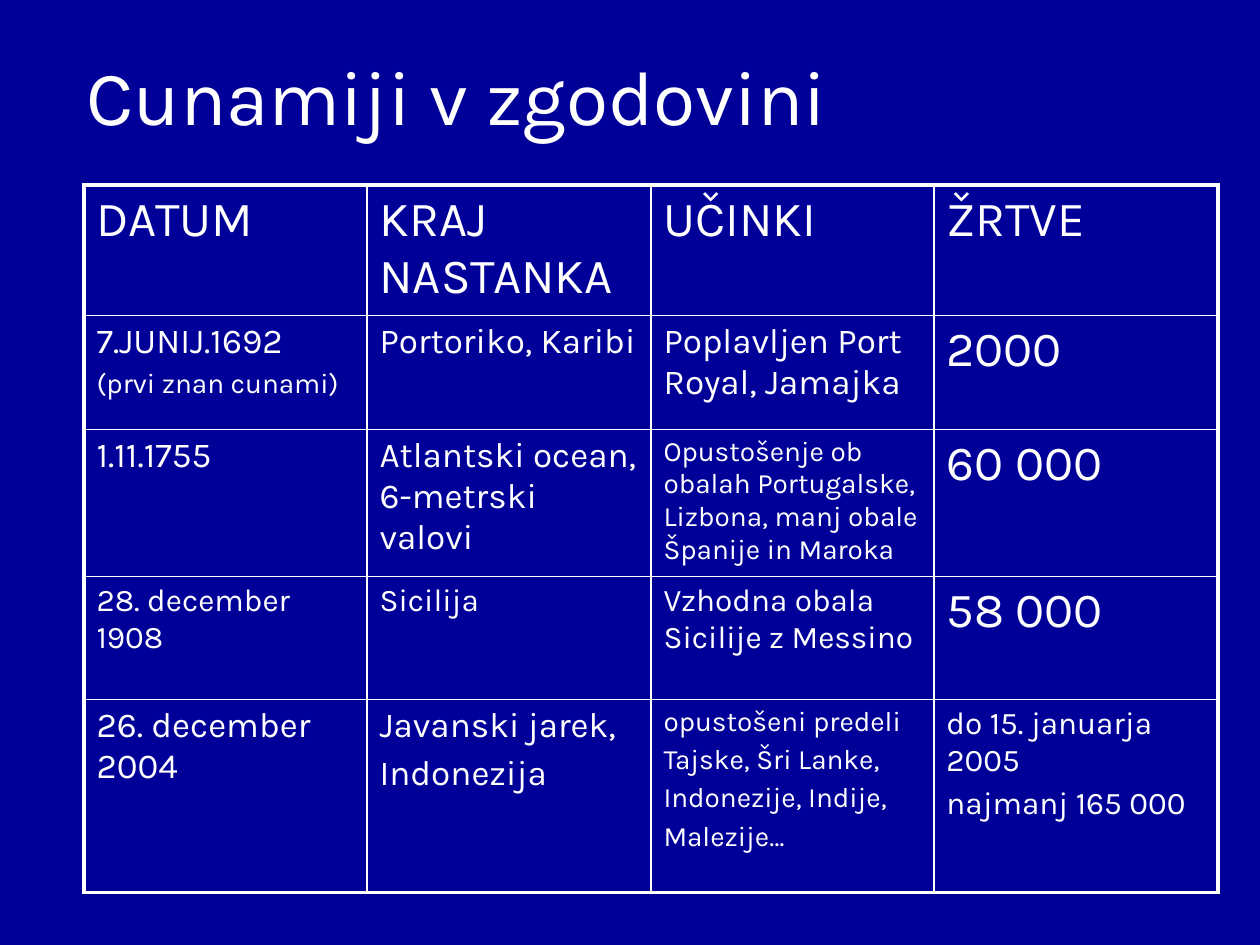
import pptx
import pptx.dml.color
import pptx.enum.text
import pptx.oxml.ns
import pptx.util
from lxml import etree

COLOURS = {"background": "000099", "text": "FFFFFF", "border": "FFFFFF"}
EMU_PER_PX = 914400 / 126
COLUMN_WIDTHS = [283, 284, 283, 284]
ROW_HEIGHTS = [127, 114, 145, 123, 193]

TSUNAMIS = [
    [[("DATUM", 28)], [("KRAJ NASTANKA", 28)], [("UČINKI", 28)], [("ŽRTVE", 28)]],
    [
        [("7.JUNIJ.1692", 20), ("(prvi znan cunami)", 16)],
        [("Portoriko, Karibi", 20)],
        [("Poplavljen Port Royal, Jamajka", 20)],
        [("2000", 28)],
    ],
    [
        [("1.11.1755", 20)],
        [("Atlantski ocean, 6-metrski valovi", 20)],
        [("Opustošenje ob obalah Portugalske, Lizbona, manj obale Španije in Maroka", 16)],
        [("60 000", 28)],
    ],
    [
        [("28. december 1908", 18)],
        [("Sicilija", 18)],
        [("Vzhodna obala Sicilije z Messino", 18)],
        [("58 000", 28)],
    ],
    [
        [("26. december 2004", 20)],
        [("Javanski jarek,", 20), ("Indonezija", 20)],
        [("opustošeni predeli", 16), ("Tajske, Šri Lanke,", 16),
         ("Indonezije, Indije,", 16), ("Malezije…", 16)],
        [("do 15. januarja 2005", 18), ("najmanj 165 000", 18)],
    ],
]


def px(length):
    return pptx.util.Emu(round(length * EMU_PER_PX))


def colour(name):
    return pptx.dml.color.RGBColor.from_string(COLOURS[name])


class SlideBuilder:
    """Draws titles and tables on one page in a shared style."""

    def __init__(self, page, font="Karla"):
        self.page = page
        self.font = font
        page.background.fill.solid()
        page.background.fill.fore_color.rgb = colour("background")

    def paragraphs(self, frame, lines):
        frame.word_wrap = True
        for index, (text, size) in enumerate(lines):
            para = frame.paragraphs[0] if index == 0 else frame.add_paragraph()
            para.text = text
            if index:
                para.space_before = pptx.util.Pt(round(size * 0.2, 1))
            para.font.name = self.font
            para.font.size = pptx.util.Pt(size)
            para.font.color.rgb = colour("text")

    def title(self, text, left, top, width, height, size):
        box = self.page.shapes.add_textbox(px(left), px(top), px(width), px(height))
        box.text_frame.vertical_anchor = pptx.enum.text.MSO_ANCHOR.MIDDLE
        self.paragraphs(box.text_frame, [(text, size)])

    def borders(self, cell, widths):
        properties = cell._tc.get_or_add_tcPr()
        for index, (side, width) in enumerate(widths.items()):
            line = etree.Element(pptx.oxml.ns.qn(f"a:ln{side}"), w=str(int(pptx.util.Pt(width))))
            fill = etree.SubElement(line, pptx.oxml.ns.qn("a:solidFill"))
            etree.SubElement(fill, pptx.oxml.ns.qn("a:srgbClr"), val=COLOURS["border"])
            properties.insert(index, line)

    def table(self, rows, left, top, widths, heights, outer=2.25, inner=1):
        frame = self.page.shapes.add_table(
            len(heights), len(widths), px(left), px(top), px(sum(widths)), px(sum(heights)))
        table = frame.table
        table.first_row = table.horz_banding = False
        for column, width in zip(table.columns, widths):
            column.width = px(width)
        last_row, last_column = len(heights) - 1, len(widths) - 1
        for r, cells in enumerate(rows):
            table.rows[r].height = px(heights[r])
            for c, lines in enumerate(cells):
                cell = table.cell(r, c)
                cell.fill.background()
                self.paragraphs(cell.text_frame, lines)
                edges = {"L": c == 0, "R": c == last_column, "T": r == 0, "B": r == last_row}
                self.borders(cell, {side: outer if edge else inner for side, edge in edges.items()})


def main():
    deck = pptx.Presentation()
    deck.slide_width, deck.slide_height = px(1260), px(945)
    builder = SlideBuilder(deck.slides.add_slide(deck.slide_layouts[6]))
    builder.title("Cunamiji v zgodovini", 74, 0, 1134, 190, 44)
    builder.table(TSUNAMIS, 84, 185, COLUMN_WIDTHS, ROW_HEIGHTS)
    deck.save("out.pptx")


if __name__ == "__main__":
    main()
